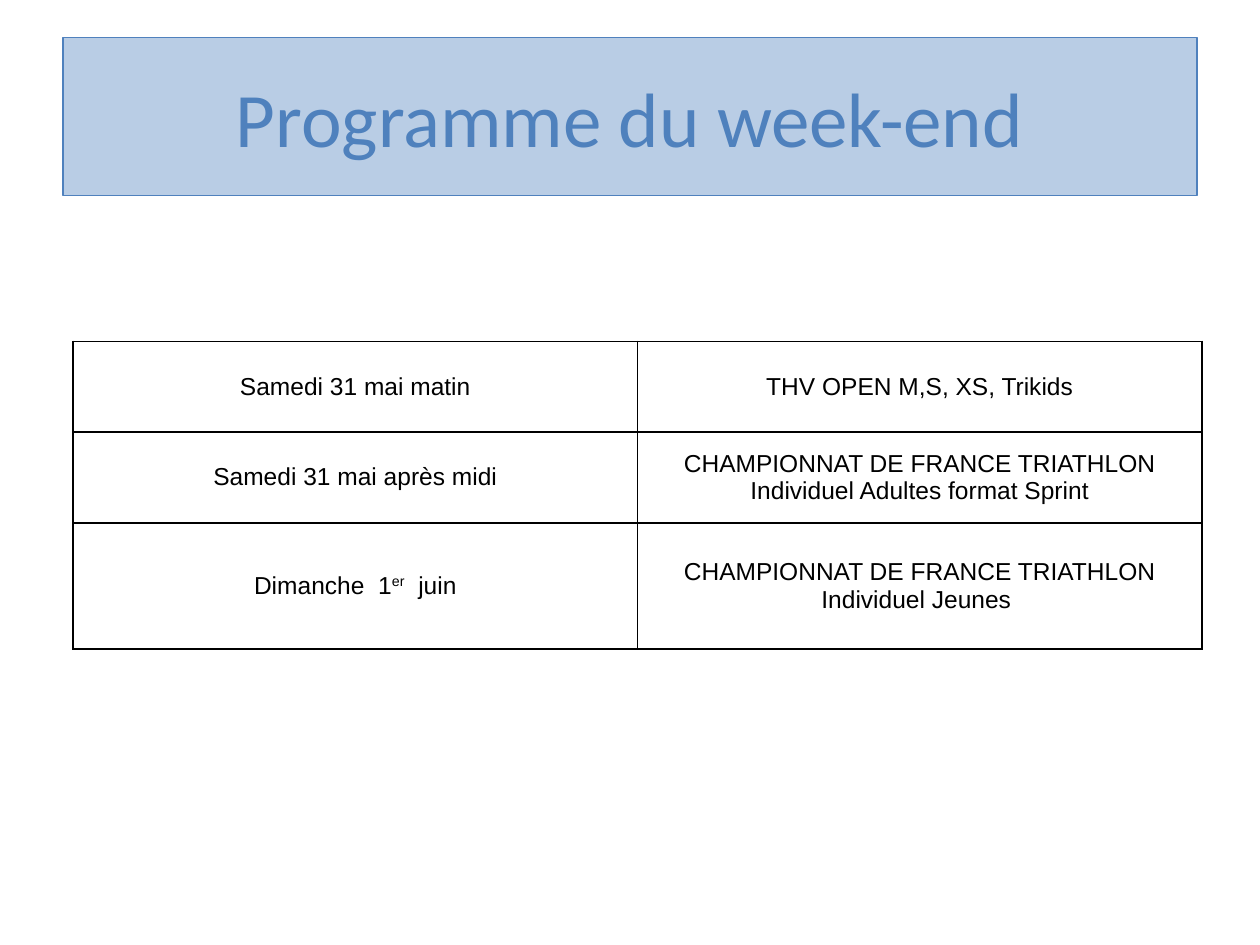
from pptx import Presentation
from pptx.dml.color import RGBColor
from pptx.enum.text import MSO_ANCHOR, PP_ALIGN
from pptx.oxml import parse_xml
from pptx.oxml.ns import nsdecls
from pptx.util import Inches, Pt

CENTER = PP_ALIGN.CENTER
MIDDLE = MSO_ANCHOR.MIDDLE

# Content: each cell is a list of paragraphs, each paragraph a list of (text, baseline) runs
TITLE = "Programme du week-end"
CHAMPIONSHIP = [("CHAMPIONNAT DE FRANCE TRIATHLON", 0)]
PROGRAMME = [
    ([[("Samedi 31 mai matin", 0)]],
     [[("THV OPEN M,S, XS, Trikids", 0)]]),
    ([[("Samedi 31 mai après midi", 0)]],
     [CHAMPIONSHIP, [("Individuel Adultes format Sprint", 0)]]),
    ([[("Dimanche  1", 0), ("er", 30), ("  juin", 0)]],
     [CHAMPIONSHIP, [("Individuel Jeunes ", 0)]]),
]

THEME = {
    "banner": RGBColor(0xB9, 0xCD, 0xE5),
    "accent": RGBColor(0x4F, 0x81, 0xBD),
    "border": "000000",
    "border_width": Pt(1),
    "title": {"name": "Calibri", "size": Pt(44), "color": RGBColor(0x4F, 0x81, 0xBD)},
    "body": {"name": "Arial", "size": Pt(14), "color": RGBColor(0, 0, 0)},
}

# Layout in inches
TITLE_BOX = {"left": 0.5, "top": 0.3, "width": 9, "height": 1.25}
TABLE_LEFT, TABLE_TOP = 0.58, 2.71
COLUMN_WIDTH = 4.48
ROW_HEIGHTS = [0.72, 0.72, 1]


def format_font(font, style):
    for attribute, value in style.items():
        if attribute == "color":
            font.color.rgb = value
        else:
            setattr(font, attribute, value)


def add_borders(cell):
    properties = cell._tc.get_or_add_tcPr()
    for position, side in enumerate(("lnL", "lnR", "lnT", "lnB")):
        properties.insert(position, parse_xml(
            f'<a:{side} {nsdecls("a")} w="{THEME["border_width"]}"><a:solidFill>'
            f'<a:srgbClr val="{THEME["border"]}"/></a:solidFill></a:{side}>'))


def fill_cell(cell, paragraphs):
    cell.fill.background()
    cell.vertical_anchor = MIDDLE
    add_borders(cell)
    frame = cell.text_frame
    for index, runs in enumerate(paragraphs):
        paragraph = frame.add_paragraph() if index else frame.paragraphs[0]
        paragraph.alignment = CENTER
        for text, baseline in runs:
            run = paragraph.add_run()
            run.text = text
            format_font(run.font, THEME["body"])
            if baseline:
                run.font._element.set("baseline", str(baseline * 1000))


def add_title(slide):
    title = slide.shapes.title
    for attribute, value in TITLE_BOX.items():
        setattr(title, attribute, Inches(value))
    title.fill.solid()
    title.fill.fore_color.rgb = THEME["banner"]
    title.line.color.rgb = THEME["accent"]
    title.line.width = Pt(0.75)
    title.text_frame.text = TITLE
    title.text_frame.vertical_anchor = MIDDLE
    paragraph = title.text_frame.paragraphs[0]
    paragraph.alignment = CENTER
    format_font(paragraph.runs[0].font, THEME["title"])


def add_programme(slide):
    column_count = len(PROGRAMME[0])
    programme = slide.shapes.add_table(
        len(PROGRAMME), column_count, Inches(TABLE_LEFT), Inches(TABLE_TOP),
        Inches(COLUMN_WIDTH * column_count), Inches(sum(ROW_HEIGHTS))).table
    programme.first_row = False
    programme.horz_banding = False
    for row, height, slots in zip(programme.rows, ROW_HEIGHTS, PROGRAMME):
        row.height = Inches(height)
        for cell, paragraphs in zip(row.cells, slots):
            fill_cell(cell, paragraphs)


def main():
    presentation = Presentation()
    presentation.slide_width = Inches(10)
    presentation.slide_height = Inches(7.5)
    slide = presentation.slides.add_slide(presentation.slide_layouts[5])
    add_title(slide)
    add_programme(slide)
    presentation.save("out.pptx")


if __name__ == "__main__":
    main()
